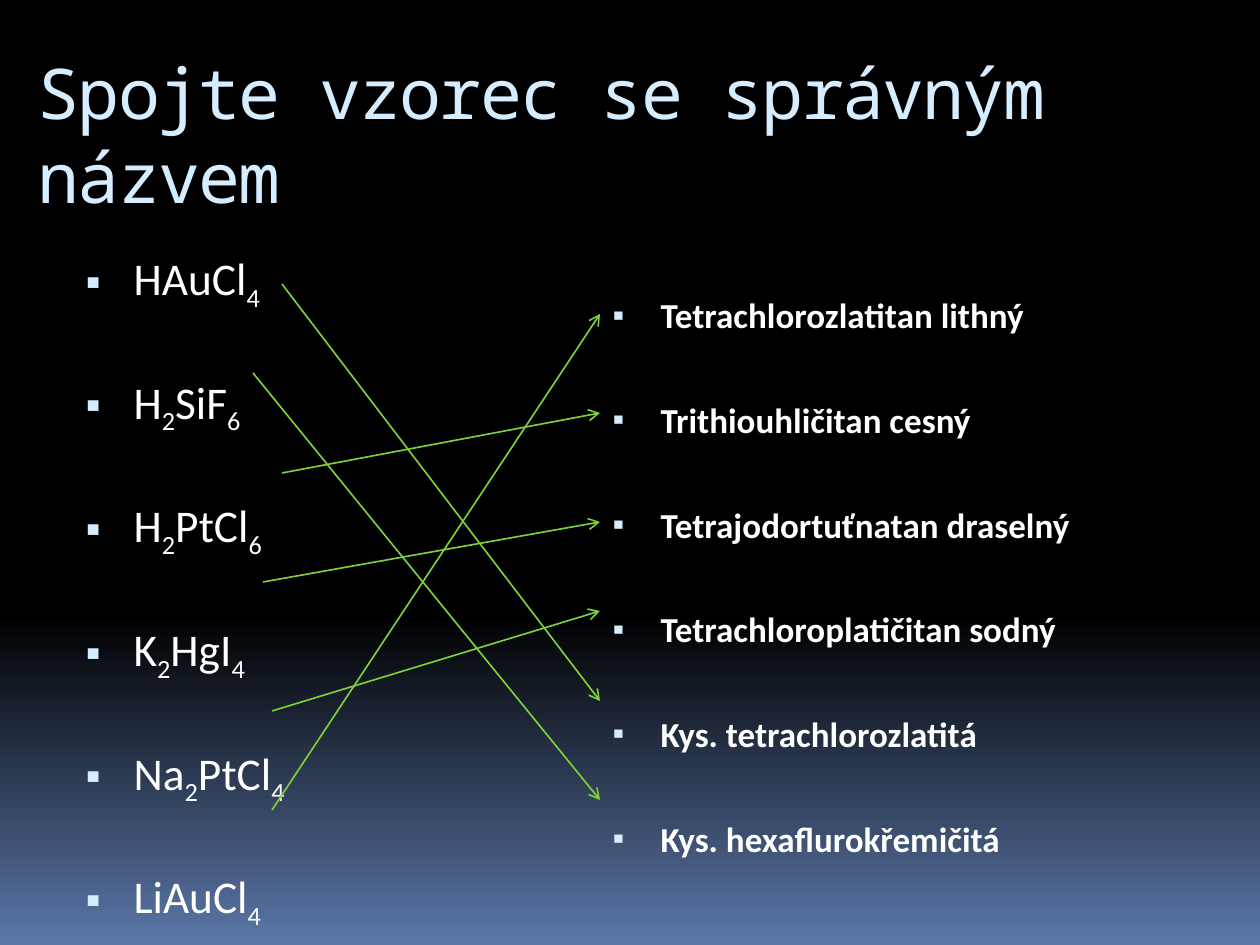
from copy import deepcopy
from itertools import groupby

from pptx import Presentation
from pptx.dml.color import RGBColor
from pptx.enum.shapes import MSO_CONNECTOR
from pptx.enum.text import MSO_ANCHOR, MSO_AUTO_SIZE, PP_ALIGN
from pptx.oxml.ns import qn
from pptx.oxml.xmlchemy import OxmlElement
from pptx.util import Pt

PX = 914400 / 126
WHITE, ICE, GREEN = "FFFFFF", "D6ECFF", "7FD13B"
BACKGROUND = [(0, "000000"), (0.65, "000000"), (1, "5B77A8")]
FORMULAS = ["HAuCl4", "H2SiF6", "H2PtCl6", "K2HgI4", "Na2PtCl4", "LiAuCl4"]
NAMES = [
    "Tetrachlorozlatitan lithný",
    "Trithiouhličitan cesný",
    "Tetrajodortuťnatan draselný",
    "Tetrachloroplatičitan sodný",
    "Kys. tetrachlorozlatitá",
    "Kys. hexaflurokřemičitá",
]
ARROW_END_X = 600
ARROWS = [
    (282, 284, 701),
    (253, 373, 800),
    (282, 473, 413),
    (263, 582, 522),
    (272, 711, 611),
    (272, 810, 314),
]


def px(value):
    return round(value * PX)


def color(value):
    return RGBColor.from_string(value)


def add_element(parent, tag, **attributes):
    element = OxmlElement(tag)
    for name, value in attributes.items():
        element.set(name, str(value))
    parent.append(element)
    return element


def paint_background(page):
    fill = page.background.fill
    fill.gradient()
    fill.gradient_angle = 270
    stop_list = page._element.find(".//" + qn("a:gsLst"))
    stop_list.insert(0, deepcopy(stop_list[0]))
    for stop, (position, value) in zip(fill.gradient_stops, BACKGROUND):
        stop.position = position
        stop.color.rgb = color(value)


def place(box, left, top, width, height, anchor):
    box.left, box.top = px(left), px(top)
    box.width, box.height = px(width), px(height)
    frame = box.text_frame
    frame.word_wrap = True
    frame.auto_size = MSO_AUTO_SIZE.NONE
    frame.vertical_anchor = anchor
    return frame


def set_font(para, name, size, value, bold=False):
    font = para.font
    font.name, font.size, font.bold = name, Pt(size), bold
    font.color.rgb = color(value)


def add_bullet(para):
    properties = para._p.get_or_add_pPr()
    properties.set("marL", str(px(57)))
    properties.set("indent", str(px(-48)))
    bullet_color = add_element(properties, "a:buClr")
    add_element(bullet_color, "a:srgbClr", val=ICE)
    add_element(properties, "a:buSzPct", val=95000)
    add_element(properties, "a:buChar", char="▪")


def add_spans(para, text, subscripts):
    if not subscripts:
        para.add_run().text = text
        return
    for is_digit, letters in groupby(text, str.isdigit):
        span = para.add_run()
        span.text = "".join(letters)
        if is_digit:
            span._r.get_or_add_rPr().set("baseline", "-25000")


def fill_title(box):
    frame = place(box, 25, 37, 1235, 193, MSO_ANCHOR.MIDDLE)
    para = frame.paragraphs[0]
    para.alignment = PP_ALIGN.LEFT
    para.add_run().text = "Spojte vzorec se správným názvem"
    set_font(para, "Noto Sans Mono", 40, ICE)
    para._p.pPr.find(qn("a:defRPr")).set("spc", "-100")


def fill_list(frame, items, size, spacings, bold=False, subscripts=False):
    for index, (text, spacing) in enumerate(zip(items, spacings)):
        para = frame.add_paragraph() if index else frame.paragraphs[0]
        add_bullet(para)
        para.line_spacing = spacing
        para.space_before = Pt(7 if index else 0)
        add_spans(para, text, subscripts)
        set_font(para, "Calibri", size, WHITE, bold)


def add_arrow(page, start_x, start_y, end_y):
    arrow = page.shapes.add_connector(
        MSO_CONNECTOR.STRAIGHT, px(start_x), px(start_y), px(ARROW_END_X), px(end_y)
    )
    arrow.line.color.rgb = color(GREEN)
    arrow.line.width = Pt(0.94)
    properties = arrow._element.spPr
    add_element(properties.find(qn("a:ln")), "a:tailEnd", type="arrow")
    add_element(properties, "a:effectLst")


def main():
    deck = Presentation()
    deck.slide_width, deck.slide_height = px(1260), px(945)
    page = deck.slides.add_slide(deck.slide_layouts[3])
    paint_background(page)
    title, formula_box, name_box = page.placeholders
    fill_title(title)
    formulas = place(formula_box, 64, 244, 557, 624, MSO_ANCHOR.TOP)
    fill_list(formulas, FORMULAS, 25.9, [1.0] + [1.8] * 5, subscripts=True)
    names = place(name_box, 591, 237, 606, 624, MSO_ANCHOR.TOP)
    fill_list(names, NAMES, 20, [2.2] * 6, bold=True)
    for arrow in ARROWS:
        add_arrow(page, *arrow)
    deck.save("out.pptx")


if __name__ == "__main__":
    main()
